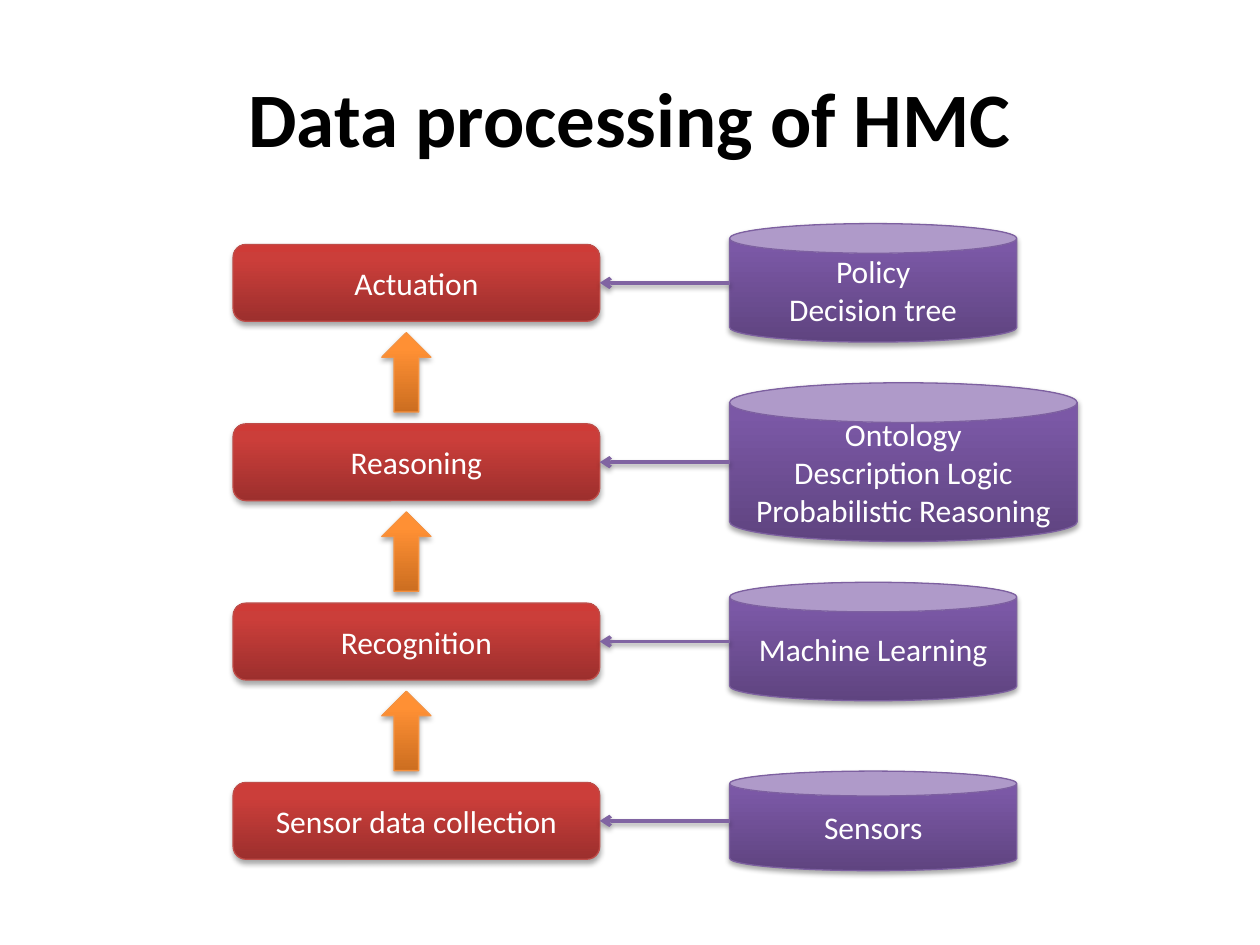
from copy import deepcopy

from lxml.etree import SubElement
from pptx import Presentation
from pptx.dml.color import RGBColor
from pptx.enum.shapes import MSO_CONNECTOR, MSO_SHAPE
from pptx.enum.text import MSO_ANCHOR, PP_ALIGN
from pptx.oxml.ns import qn
from pptx.util import Inches, Pt

BLACK = RGBColor(0x00, 0x00, 0x00)
WHITE = RGBColor(0xFF, 0xFF, 0xFF)
CONNECTOR = RGBColor(0x80, 0x64, 0xA2)

# Each palette: gradient stops from bottom to top, then the outline
RED = (RGBColor(0x9C, 0x2F, 0x2D), RGBColor(0xCB, 0x3E, 0x3A),
       RGBColor(0xCE, 0x3B, 0x37), RGBColor(0xBF, 0x4C, 0x48))
PURPLE = (RGBColor(0x5F, 0x44, 0x80), RGBColor(0x7B, 0x58, 0xA6),
          RGBColor(0x7C, 0x57, 0xA8), RGBColor(0x7D, 0x60, 0xA0))
ORANGE = (RGBColor(0xCC, 0x6E, 0x20), RGBColor(0xFF, 0x90, 0x34),
          RGBColor(0xFF, 0x91, 0x36), RGBColor(0xF6, 0x92, 0x40))
STOP_POSITIONS = (0, 0.8, 1)

# Stage, store lines, store width, store height, from top to bottom
STAGES = [
    ("Actuation", ["Policy", "Decision tree"], 2.28, 0.94),
    ("Reasoning", ["Ontology", "Description Logic", "Probabilistic Reasoning"], 2.76, 1.26),
    ("Recognition", ["Machine Learning"], 2.28, 0.94),
    ("Sensor data collection", ["Sensors"], 2.28, 0.79),
]
STAGE_LEFT, STAGE_WIDTH, STAGE_HEIGHT = 1.85, 2.91, 0.61
FIRST_TOP, LAST_TOP = 1.94, 6.21
PITCH = (LAST_TOP - FIRST_TOP) / (len(STAGES) - 1)
STORE_LEFT = 5.79


class SlideBuilder:
    font = "Calibri"
    body_size = 18
    title_size = 44

    def __init__(self, page):
        self.page = page

    def add_lines(self, shape, lines, size, color, bold=False):
        frame = shape.text_frame
        frame.word_wrap = True
        frame.vertical_anchor = MSO_ANCHOR.MIDDLE
        for index, line in enumerate(lines):
            para = frame.paragraphs[0] if index == 0 else frame.add_paragraph()
            para.alignment = PP_ALIGN.CENTER
            span = para.add_run()
            span.text = line
            span.font.name = self.font
            span.font.size = Pt(size)
            span.font.bold = bold
            span.font.color.rgb = color

    def shade(self, effects, opacity, distance):
        shadow = SubElement(effects, qn("a:outerShdw"), blurRad=str(Pt(3.1)),
                            dist=str(Pt(distance)), dir="5400000", rotWithShape="0")
        color = SubElement(shadow, qn("a:srgbClr"), val=str(BLACK))
        SubElement(color, qn("a:alpha"), val=str(opacity * 1000))

    def title(self, text, left, top, width, height):
        box = self.page.shapes.add_textbox(
            Inches(left), Inches(top), Inches(width), Inches(height))
        self.add_lines(box, [text], self.title_size, BLACK, bold=True)

    def block(self, kind, palette, left, top, width, height, lines=()):
        shape = self.page.shapes.add_shape(
            kind, Inches(left), Inches(top), Inches(width), Inches(height))
        shape.fill.gradient()
        shape.fill.gradient_angle = 90
        stops = shape._element.spPr.find(qn("a:gradFill")).find(qn("a:gsLst"))
        stops.append(deepcopy(stops[-1]))
        for stop, position, color in zip(shape.fill.gradient_stops, STOP_POSITIONS, palette):
            stop.position = position
            stop.color.rgb = color
        shape.line.color.rgb = palette[-1]
        shape.line.width = Pt(0.75)
        shape.shadow.inherit = False
        self.shade(shape._element.spPr.find(qn("a:effectLst")), 35, 1.8)
        self.add_lines(shape, lines, self.body_size, WHITE)
        return shape

    def arrow(self, store, stage):
        middle = stage.top + stage.height // 2
        line = self.page.shapes.add_connector(
            MSO_CONNECTOR.STRAIGHT, store.left, middle, stage.left + stage.width, middle)
        line.end_connect(stage, 3)
        line.line.color.rgb = CONNECTOR
        line.line.width = Pt(2)
        properties = line._element.spPr
        SubElement(properties.find(qn("a:ln")), qn("a:tailEnd"), type="arrow")
        self.shade(SubElement(properties, qn("a:effectLst")), 38, 1.6)


def main():
    deck = Presentation()
    deck.slide_width, deck.slide_height = Inches(10), Inches(7.5)
    builder = SlideBuilder(deck.slides.add_slide(deck.slide_layouts[6]))
    builder.title("Data processing of HMC", 0.5, 0.3, 9, 1.25)

    for row, (name, store_lines, width, height) in enumerate(STAGES):
        top = FIRST_TOP + row * PITCH
        # Stage and the store that feeds it, centred on one row
        stage = builder.block(MSO_SHAPE.ROUNDED_RECTANGLE, RED,
                              STAGE_LEFT, top, STAGE_WIDTH, STAGE_HEIGHT, [name])
        store_top = top + (STAGE_HEIGHT - height) / 2
        store = builder.block(MSO_SHAPE.CAN, PURPLE,
                              STORE_LEFT, store_top, width, height, store_lines)
        builder.arrow(store, stage)
        # Upward arrow from the stage below
        if row < len(STAGES) - 1:
            builder.block(MSO_SHAPE.UP_ARROW, ORANGE, 3.03, top + 0.7, 0.39, 0.63)

    deck.save("out.pptx")


if __name__ == "__main__":
    main()
